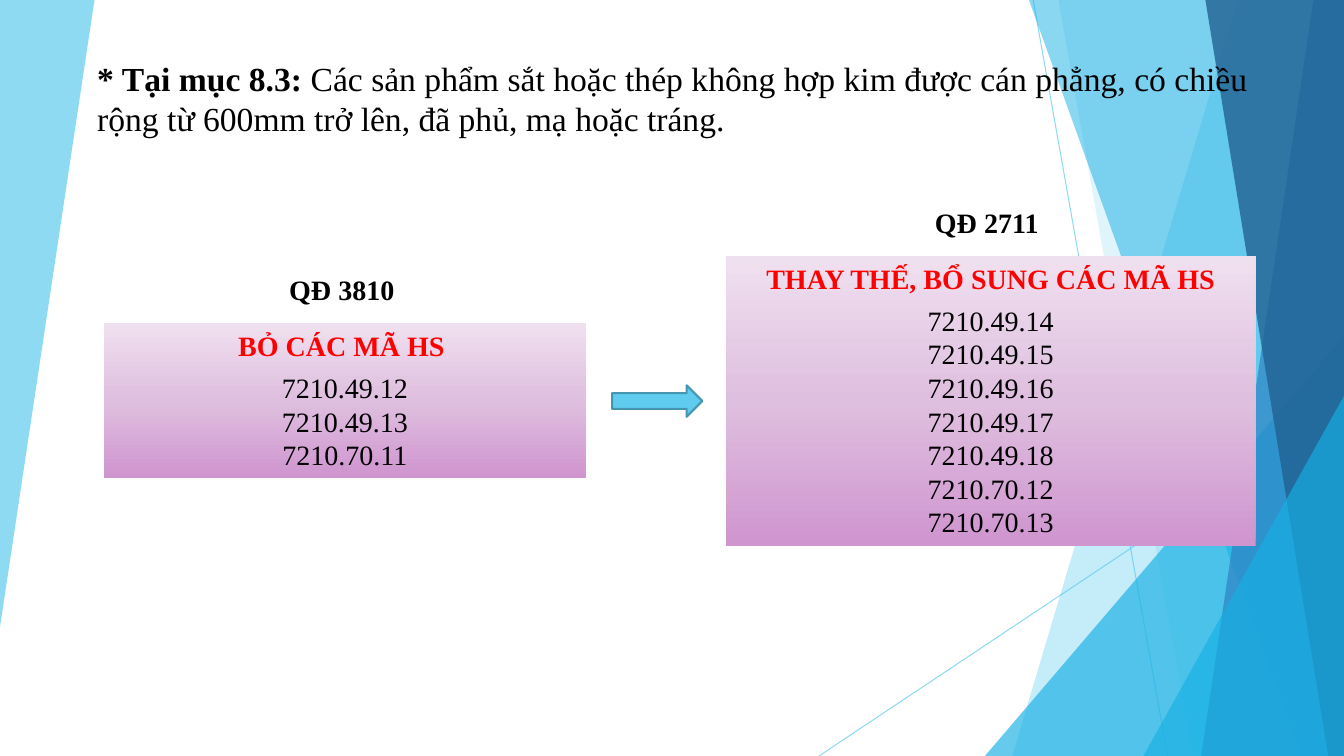
from copy import deepcopy

from lxml import etree
from pptx import Presentation
from pptx import util as u
from pptx.dml.color import RGBColor
from pptx.enum import shapes, text
from pptx.oxml.ns import qn

PX = 9525
WIDTH, HEIGHT = 1280, 720
FONT = "Times New Roman"
SKY, BLUE = "5FCBEF", "17B0E4"
GRADIENT = [(0, "CF95CF"), (0.5, "DFBFDF"), (1, "EFE0EF")]


def px(*lengths):
    return [u.Emu(length * PX) for length in lengths]


def paint(color_format, value, alpha=100):
    color_format.rgb = RGBColor.from_string(value)


def fade(shape, alpha):
    for color in shape._element.spPr.iter(qn("a:srgbClr")):
        etree.SubElement(color, qn("a:alpha")).set("val", str(alpha * 1000))


def fill_facet(shape, value, alpha):
    shape.shadow.inherit = False
    shape.fill.solid()
    paint(shape.fill.fore_color, value)
    shape.line.fill.background()
    fade(shape, alpha)


def add_facet(page, points, value, alpha):
    builder = page.shapes.build_freeform(*points[0], scale=PX)
    builder.add_line_segments(points[1:], close=True)
    fill_facet(builder.convert_to_shape(), value, alpha)


def add_band(page, top_left, bottom_left, value, alpha):
    points = [(top_left, 0), (WIDTH, 0), (WIDTH, HEIGHT), (bottom_left, HEIGHT)]
    add_facet(page, points, value, alpha)


def add_corner(page, left, top):
    box = px(left, top, WIDTH - left, HEIGHT - top)
    corner = page.shapes.add_shape(shapes.MSO_SHAPE.ISOSCELES_TRIANGLE, *box)
    corner.adjustments[0] = 1
    fill_facet(corner, BLUE, 66)


def add_ray(page, start, end):
    ray = page.shapes.add_connector(shapes.MSO_CONNECTOR.STRAIGHT, *px(*start, *end))
    ray.line.width = u.Pt(0.75)
    paint(ray.line.color, SKY)
    fade(ray, 70)
    etree.SubElement(ray._element.spPr, qn("a:effectLst"))


def add_backdrop(page):
    add_facet(page, [(0, 0), (90, 0), (0, 597)], SKY, 70)
    add_ray(page, (984, 0), (1112, HEIGHT))
    add_ray(page, (WIDTH, 387), (780, HEIGHT))
    add_band(page, 1179, 964, SKY, 36)
    add_band(page, 1008, 1136, SKY, 20)
    add_corner(page, 938, 320)
    add_band(page, 980, 1239, BLUE, 50)
    add_band(page, 1251, 1144, "2E83C3", 70)
    add_band(page, 1148, 1265, "226292", 80)
    add_corner(page, 1089, 377)


def style(span, size, value="000000", bold=False):
    span.font.name = FONT
    span.font.size = u.Pt(size)
    span.font.bold = bold
    paint(span.font.color, value)


def add_heading(page, box, lead, rest):
    title = page.shapes.title
    title.left, title.top, title.width, title.height = px(*box)
    page.shapes._spTree.append(title._element)
    frame = title.text_frame
    frame.auto_size = text.MSO_AUTO_SIZE.NONE
    frame.vertical_anchor = text.MSO_ANCHOR.TOP
    para = frame.paragraphs[0]
    para.alignment = text.PP_ALIGN.JUSTIFY
    for words, bold in ((lead, True), (rest, False)):
        span = para.add_run()
        span.text = words
        style(span, 24, bold=bold)


def fill_gradient(shape):
    shape.fill.gradient()
    shape.fill.gradient_angle = 90
    first = shape.fill.gradient_stops[0]._gs
    first.addnext(deepcopy(first))
    for stop, (position, value) in zip(shape.fill.gradient_stops, GRADIENT):
        stop.position = position
        paint(stop.color, value)


def add_code_panel(page, box, label, heading, codes):
    left, top, width, height = box
    label_box = px(left + width // 2 - 62, top - 53, 124, 42)
    frame = page.shapes.add_textbox(*label_box).text_frame
    frame.word_wrap = True
    frame.text = label
    style(frame.paragraphs[0].runs[0], 20, bold=True)

    panel = page.shapes.add_shape(shapes.MSO_SHAPE.RECTANGLE, *px(*box))
    panel.shadow.inherit = False
    panel.line.fill.background()
    fill_gradient(panel)
    frame = panel.text_frame
    frame.word_wrap = True
    frame.vertical_anchor = text.MSO_ANCHOR.TOP
    frame.text = "\n".join([heading, *codes])
    for para in frame.paragraphs:
        para.alignment = text.PP_ALIGN.CENTER
        style(para.runs[0], 20)
    frame.paragraphs[0].space_after = u.Pt(6)
    style(frame.paragraphs[0].runs[0], 20, "FF0000", True)


def add_arrow(page, box):
    arrow = page.shapes.add_shape(shapes.MSO_SHAPE.RIGHT_ARROW, *px(*box))
    arrow.shadow.inherit = False
    arrow.fill.solid()
    paint(arrow.fill.fore_color, SKY)
    paint(arrow.line.color, "4696B1")
    arrow.line.width = u.Pt(1.5)


def main():
    deck = Presentation()
    deck.slide_width, deck.slide_height = px(WIDTH, HEIGHT)
    page = deck.slides.add_slide(deck.slide_layouts[5])
    add_backdrop(page)
    add_heading(
        page, (83, 50, 1115, 87), "* Tại mục 8.3: ",
        "Các sản phẩm sắt hoặc thép không hợp kim được cán phẳng, "
        "có chiều rộng từ 600mm trở lên, đã phủ, mạ hoặc tráng.")
    add_code_panel(
        page, (99, 308, 459, 147), "QĐ 3810", "BỎ CÁC MÃ HS ",
        ["7210.49.12", "7210.49.13", "7210.70.11"])
    add_code_panel(
        page, (691, 244, 505, 276), "QĐ 2711", "THAY THẾ, BỔ SUNG CÁC MÃ HS",
        [f"7210.49.{number}" for number in range(14, 19)] + ["7210.70.12", "7210.70.13"])
    add_arrow(page, (583, 367, 86, 30))
    deck.save("out.pptx")


if __name__ == "__main__":
    main()
